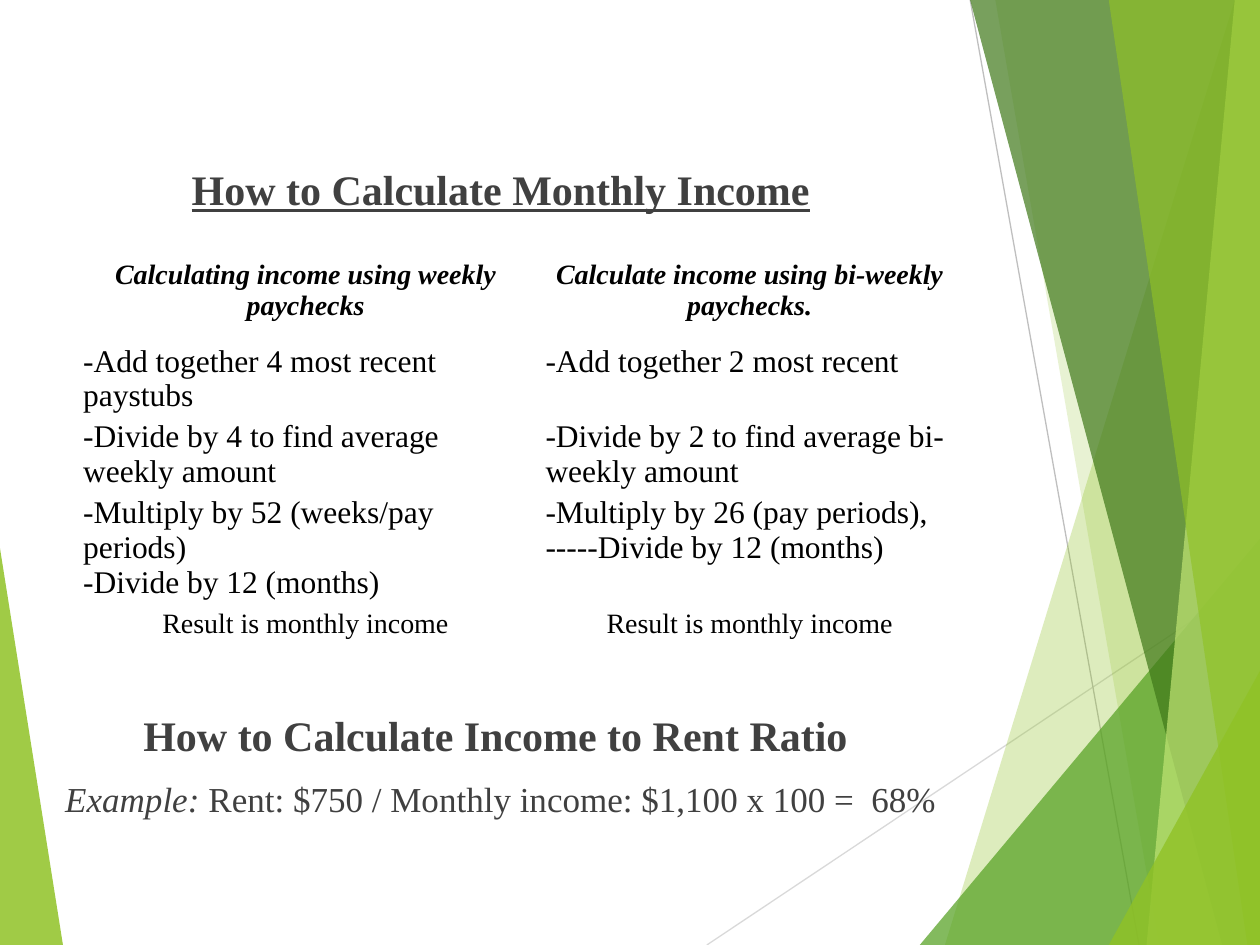
from lxml.etree import SubElement
from pptx import Presentation
from pptx.dml.color import RGBColor
from pptx.enum.shapes import MSO_CONNECTOR
from pptx.enum.text import MSO_ANCHOR, PP_ALIGN
from pptx.oxml.ns import qn
from pptx.util import Inches, Pt

FONT = "Times New Roman"

deck = Presentation()
deck.slide_width, deck.slide_height = Inches(10), Inches(7.5)
slide = deck.slides.add_slide(deck.slide_layouts[6])
shapes = slide.shapes

# All places and sizes are percentages of the slide's width and height
X, Y = deck.slide_width / 100, deck.slide_height / 100


def paint(color_format, color, alpha=100):
    """Set a colour from a hex string, with its opacity in percent."""
    color_format.rgb = RGBColor.from_string(color)
    if alpha < 100:
        fill = color_format._xFill
        SubElement(fill.find(qn("a:srgbClr")), qn("a:alpha"), val=str(alpha * 1000))


def add_run(paragraph, text, size, color, bold=False, italic=False, underline=False):
    run = paragraph.add_run()
    run.text = text
    font = run.font
    font.name, font.size = FONT, Pt(size)
    font.bold, font.italic, font.underline = bold, italic, underline
    paint(font.color, color)


# Decorative facets and thin lines, from back to front
left_facet = ("90C226", 85, [(0, 58.5), (4.9, 100), (0, 100)])
right_facets = [
    ("90C226", 30, [(97.5, 0), (75.4, 100), (100, 100), (100, 0)]),
    ("90C226", 20, [(78.8, 0), (91.9, 100), (100, 100), (100, 0)]),
    ("54A021", 72, [(72.6, 100), (100, 57.2), (100, 100)]),
    ("3F7819", 70, [(76.7, 0), (97, 100), (100, 100), (100, 0)]),
    ("C0E474", 70, [(98.1, 0), (90.7, 100), (100, 100), (100, 0)]),
    ("90C226", 65, [(88.3, 0), (98.6, 100), (100, 100), (99.8, 0)]),
    ("90C226", 80, [(88.1, 100), (100, 71.3), (100, 100)]),
]
thin_lines = [("D9D9D9", (56.1, 100), (100, 60.9)), ("BFBFBF", (77, 0), (90.4, 100))]

for color, start, end in thin_lines:
    line = shapes.add_connector(
        MSO_CONNECTOR.STRAIGHT,
        int(start[0] * X), int(start[1] * Y), int(end[0] * X), int(end[1] * Y))
    line.line.width = Pt(0.75)
    paint(line.line.color, color)
    SubElement(line._element.spPr, qn("a:effectLst"))

for color, alpha, corners in [left_facet] + right_facets:
    builder = shapes.build_freeform(*corners[0], scale=(X, Y))
    builder.add_line_segments(corners[1:], close=True)
    facet = builder.convert_to_shape()
    facet.shadow.inherit = False
    facet.line.fill.background()
    facet.fill.solid()
    paint(facet.fill.fore_color, color)
    rgb = facet._element.spPr.find(qn("a:solidFill")).find(qn("a:srgbClr"))
    SubElement(rgb, qn("a:alpha"), val=str(alpha * 1000))

# Headings above and below the table: space before (pt), then runs
body = [
    (0, [("How to Calculate Monthly Income", 24, "404040", True, False, True)]),
    (283, [("How to Calculate Income to Rent Ratio ", 24, "404040", True)]),
    (10, [("Example: ", 20, "404040", False, True),
          ("Rent: $750 / Monthly income: $1,100 x 100 =  68%", 20, "404040")]),
]
headings = shapes.add_textbox(
    int(-1.9 * X), int(16.67 * Y), int(83.3 * X), int(58.4 * Y)).text_frame
headings.word_wrap = True
headings.vertical_anchor = MSO_ANCHOR.TOP
for index, (space, runs) in enumerate(body):
    paragraph = headings.add_paragraph() if index else headings.paragraphs[0]
    paragraph.alignment = PP_ALIGN.CENTER
    paragraph.space_before = Pt(space)
    for run in runs:
        add_run(paragraph, *run)

# Steps for weekly and bi-weekly pay: row height, weekly text, bi-weekly text
steps = [
    (8.93, ["Calculating income using weekly paychecks"],
     ["Calculate income using bi-weekly paychecks."]),
    (8, ["-Add together 4 most recent paystubs"], ["-Add together 2 most recent"]),
    (8, ["-Divide by 4 to find average weekly amount"],
     ["-Divide by 2 to find average bi-weekly amount"]),
    (12, ["-Multiply by 52 (weeks/pay periods)", "-Divide by 12 (months)"],
     ["-Multiply by 26 (pay periods), -----Divide by 12 (months)"]),
    (4, ["Result is monthly income"], ["Result is monthly income"]),
]
last = len(steps) - 1
thick_below = (0, 3)
column_widths = (36.7, 33.8)
table = shapes.add_table(
    len(steps), 2, int(5.9 * X), int(27.47 * Y), int(sum(column_widths) * X),
    int(sum(step[0] for step in steps) * Y)).table
table.first_row = table.horz_banding = False
for column, width in zip(table.columns, column_widths):
    column.width = int(width * X)

for row, (height, *texts) in enumerate(steps):
    table.rows[row].height = int(height * Y)
    for column, lines in enumerate(texts):
        cell = table.cell(row, column)
        cell.margin_left = cell.margin_right = Inches(0.07)
        cell.margin_top = cell.margin_bottom = 0
        for index, text in enumerate(lines):
            frame = cell.text_frame
            paragraph = frame.add_paragraph() if index else frame.paragraphs[0]
            centred = row in (0, last)
            paragraph.alignment = PP_ALIGN.CENTER if centred else PP_ALIGN.LEFT
            add_run(paragraph, text, 16 if centred else 18, "000000", row == 0, row == 0)
        properties = cell._tc.get_or_add_tcPr()
        top = 3 if row - 1 in thick_below else 1
        bottom = 3 if row in thick_below else 1
        for side, width in (("L", 1), ("R", 1), ("T", top), ("B", bottom)):
            border = SubElement(properties, qn("a:ln" + side), w=str(Pt(width)))
            SubElement(SubElement(border, qn("a:solidFill")), qn("a:srgbClr"), val="FFFFFF")
        cell.fill.background()

deck.save("out.pptx")
